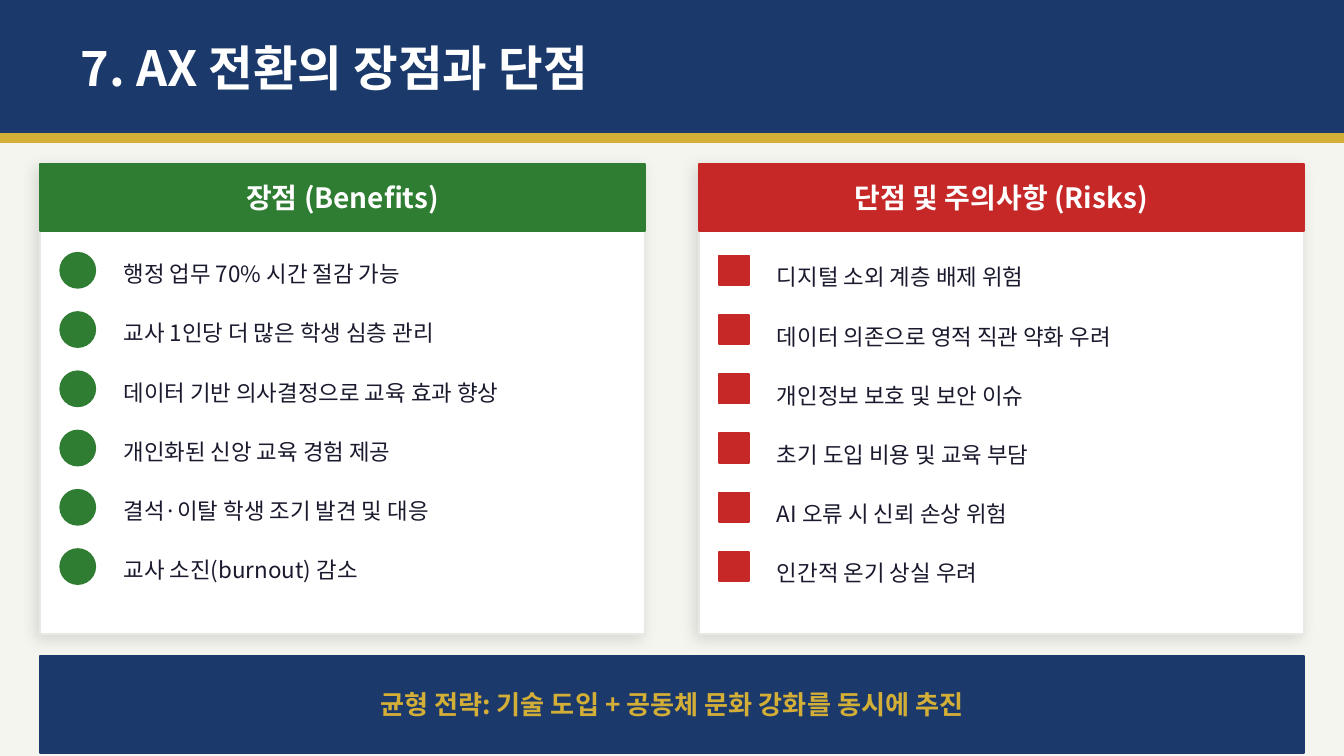
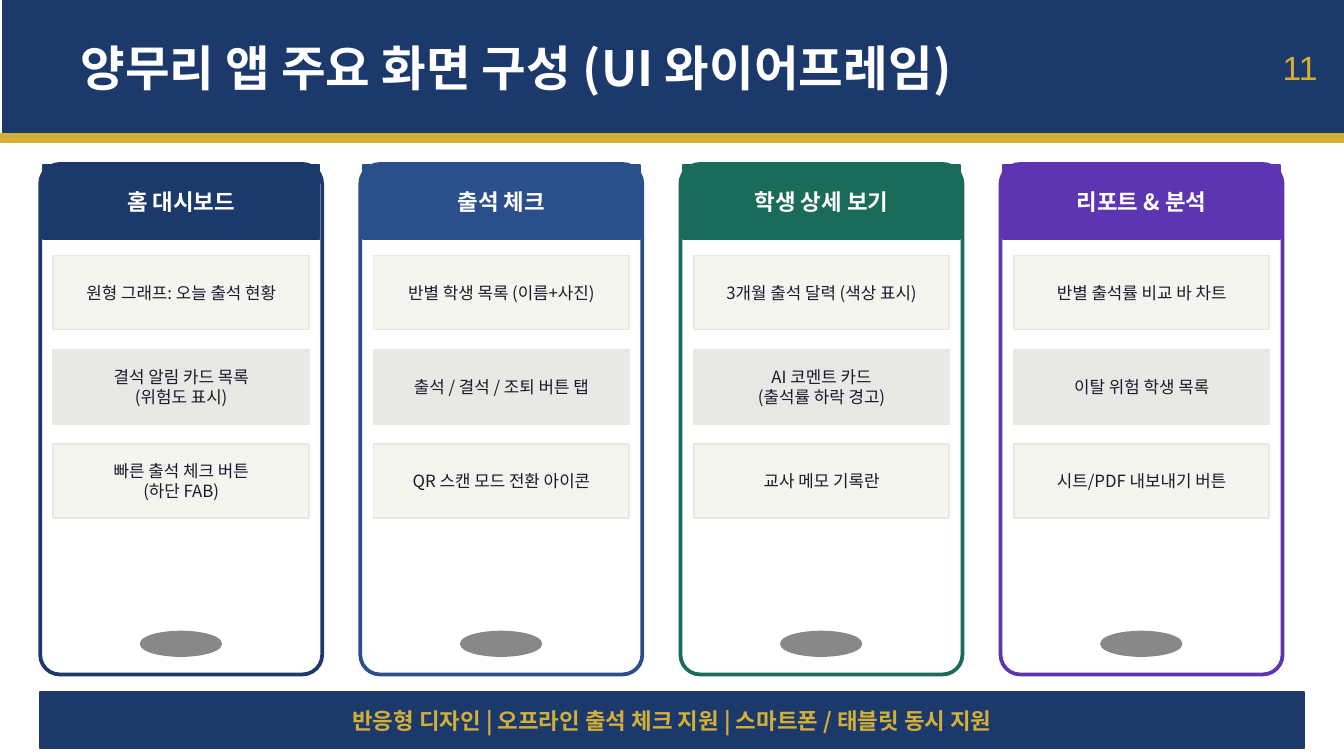
"""Build two slides: benefits and risks of the AX transition, and the app wireframe."""
import pptx
import pptx.dml.color
import pptx.enum.shapes
import pptx.enum.text
import pptx.oxml.ns
import pptx.util
from lxml import etree

Cm = pptx.util.Cm
Pt = pptx.util.Pt
SHAPE = pptx.enum.shapes.MSO_SHAPE
ALIGN = pptx.enum.text.PP_ALIGN
qn = pptx.oxml.ns.qn

KOREAN_FONT = "Noto Sans CJK KR"
NAVY, GOLD, WHITE, INK = "1B3A6B", "D4AF37", "FFFFFF", "1A1A2E"
IVORY, STONE, GRAY = "F5F5F0", "E8E8E4", "888888"
SLIDE_WIDTH, SLIDE_HEIGHT = 25.4, 14.29
MARGIN, CONTENT_TOP = 0.76, 3.1

BALANCE = {
    "title": "7. AX 전환의 장점과 단점",
    "footer": "균형 전략: 기술 도입 + 공동체 문화 강화를 동시에 추진",
    "cards": [
        {
            "heading": "장점 (Benefits)", "color": "2E7D32", "left": MARGIN,
            "marker": SHAPE.OVAL, "marker_size": 0.66,
            "list_offset": 1.32, "list_top": 4.72, "list_width": 9.78,
            "items": [
                "행정 업무 70% 시간 절감 가능",
                "교사 1인당 더 많은 학생 심층 관리",
                "데이터 기반 의사결정으로 교육 효과 향상",
                "개인화된 신앙 교육 경험 제공",
                "결석·이탈 학생 조기 발견 및 대응",
                "교사 소진(burnout) 감소",
            ],
        },
        {
            "heading": "단점 및 주의사항 (Risks)", "color": "C62828", "left": 13.21,
            "marker": SHAPE.RECTANGLE, "marker_size": 0.56,
            "list_offset": 1.22, "list_top": 4.78, "list_width": 9.91,
            "items": [
                "디지털 소외 계층 배제 위험",
                "데이터 의존으로 영적 직관 약화 우려",
                "개인정보 보호 및 보안 이슈",
                "초기 도입 비용 및 교육 부담",
                "AI 오류 시 신뢰 손상 위험",
                "인간적 온기 상실 우려",
            ],
        },
    ],
}

WIREFRAME = {
    "title": "양무리 앱 주요 화면 구성 (UI 와이어프레임)",
    "number": "11",
    "footer": "반응형 디자인 | 오프라인 출석 체크 지원 | 스마트폰 / 태블릿 동시 지원",
    "phones": [
        ("홈 대시보드", NAVY, [
            "원형 그래프: 오늘 출석 현황",
            "결석 알림 카드 목록\n(위험도 표시)",
            "빠른 출석 체크 버튼\n(하단 FAB)",
        ]),
        ("출석 체크", "2A4F8A", [
            "반별 학생 목록 (이름+사진)",
            "출석 / 결석 / 조퇴 버튼 탭",
            "QR 스캔 모드 전환 아이콘",
        ]),
        ("학생 상세 보기", "1A6B5A", [
            "3개월 출석 달력 (색상 표시)",
            "AI 코멘트 카드\n(출석률 하락 경고)",
            "교사 메모 기록란",
        ]),
        ("리포트 & 분석", "5E35B1", [
            "반별 출석률 비교 바 차트",
            "이탈 위험 학생 목록",
            "시트/PDF 내보내기 버튼",
        ]),
    ],
}


def rgb(value):
    """Turn a hex string into a colour."""
    return pptx.dml.color.RGBColor.from_string(value)


def write_text(shape, text, size, color, bold=False, align=ALIGN.CENTER, font=KOREAN_FONT):
    """Fill a shape with vertically centred text, one paragraph per line."""
    frame = shape.text_frame
    frame.text = text
    frame.word_wrap = True
    frame.auto_size = pptx.enum.text.MSO_AUTO_SIZE.NONE
    frame.vertical_anchor = pptx.enum.text.MSO_ANCHOR.MIDDLE
    for paragraph in frame.paragraphs:
        paragraph.alignment = align
        paragraph.font.size = Pt(size)
        paragraph.font.bold = bold
        paragraph.font.color.rgb = rgb(color)
        paragraph.font.name = font
        properties = paragraph._p.pPr.find(qn("a:defRPr"))
        etree.SubElement(properties, qn("a:ea"), typeface=font)


def add_box(slide, left, top, width, height, fill, line=None, kind=SHAPE.RECTANGLE, weight=1):
    """Add a flat filled shape, outlined in its own colour by default."""
    shape = slide.shapes.add_shape(kind, Cm(left), Cm(top), Cm(width), Cm(height))
    shape.shadow.inherit = False
    shape.fill.solid()
    shape.fill.fore_color.rgb = rgb(fill)
    shape.line.color.rgb = rgb(line or fill)
    shape.line.width = Pt(weight)
    return shape


def add_soft_shadow(shape):
    """Give a shape a faint blurred shadow."""
    effects = shape._element.spPr.find(qn("a:effectLst"))
    shadow = etree.SubElement(effects, qn("a:outerShdw"), blurRad=str(Pt(8)),
                              dist=str(Pt(3)), dir="8100000", algn="bl", rotWithShape="0")
    color = etree.SubElement(shadow, qn("a:srgbClr"), val="000000")
    etree.SubElement(color, qn("a:alpha"), val="12000")


def place(slide, placeholder, left, top, width, height):
    """Move a placeholder and bring it to the front."""
    placeholder.left, placeholder.top = Cm(left), Cm(top)
    placeholder.width, placeholder.height = Cm(width), Cm(height)
    slide.shapes._spTree.append(placeholder._element)


def add_framed_slide(presentation, layout_index, content, background, band_left=0):
    """Add a slide with the title band and gold stripe."""
    slide = presentation.slides.add_slide(presentation.slide_layouts[layout_index])
    slide.background.fill.solid()
    slide.background.fill.fore_color.rgb = rgb(background)
    add_box(slide, band_left, 0, SLIDE_WIDTH, 2.54, NAVY)
    add_box(slide, 0, 2.54, SLIDE_WIDTH, 0.15, GOLD)
    place(slide, slide.shapes.title, 1.27, 0.2, 21.59, 2.13)
    write_text(slide.shapes.title, content["title"], 26, WHITE, True, ALIGN.LEFT)
    return slide


def add_footer(slide, text, top, height, size):
    """Add the closing message bar."""
    bar = add_box(slide, MARGIN, top, SLIDE_WIDTH - 2 * MARGIN, height, NAVY)
    write_text(bar, text, size, GOLD, True)


def add_card(slide, card, placeholder):
    """Add a headed card with a marked list."""
    left, width, size = card["left"], 11.43, card["marker_size"]
    add_soft_shadow(add_box(slide, left, CONTENT_TOP, width, 8.89, WHITE, STONE))
    heading = add_box(slide, left, CONTENT_TOP, width, 1.27, card["color"])
    write_text(heading, card["heading"], 15, WHITE, True)
    for row in range(len(card["items"])):
        center = 5.11 + 1.12 * row
        add_box(slide, left + 0.38, center - size / 2, size, size,
                card["color"], kind=card["marker"])
    place(slide, placeholder, left + card["list_offset"], card["list_top"],
          card["list_width"], 6.4)
    placeholder.text_frame.text = "\n".join(card["items"])
    for row, paragraph in enumerate(placeholder.text_frame.paragraphs):
        properties = paragraph._p.get_or_add_pPr()
        properties.set("marL", "0")
        properties.set("indent", "0")
    write_list(placeholder, card["items"])


def write_list(placeholder, items):
    """Write evenly spaced list lines without bullets of their own."""
    write_text(placeholder, "\n".join(items), 12, INK, align=ALIGN.LEFT)
    for row, paragraph in enumerate(placeholder.text_frame.paragraphs):
        paragraph.line_spacing = Pt(17.3)
        paragraph.space_before = Pt(14.4 if row else 0)
        properties = paragraph._p.pPr
        properties.set("marL", "0")
        properties.set("indent", "0")
        properties.find(qn("a:defRPr")).addprevious(etree.Element(qn("a:buNone")))


def add_phone(slide, left, heading, color, panels):
    """Add one phone screen with its header, panels and home button."""
    body = add_box(slide, left, CONTENT_TOP, 5.33, 9.65, WHITE, color,
                   SHAPE.ROUNDED_RECTANGLE, 2)
    body.adjustments[0] = 0.07
    header = add_box(slide, left + 0.05, 3.12, 5.23, 1.4, color)
    write_text(header, heading, 12, WHITE, True)
    for row, text in enumerate(panels):
        panel = add_box(slide, left + 0.25, 4.83 + 1.78 * row, 4.83, 1.4,
                        STONE if row % 2 else IVORY, STONE)
        write_text(panel, text, 9, INK)
    add_box(slide, left + 1.9, 11.94, 1.52, 0.46, GRAY, kind=SHAPE.OVAL)


def build_balance(presentation):
    """Build the slide that weighs benefits against risks."""
    slide = add_framed_slide(presentation, 3, BALANCE, IVORY)
    bodies = [shape for shape in slide.placeholders if shape.placeholder_format.idx]
    for card, placeholder in zip(BALANCE["cards"], bodies):
        add_card(slide, card, placeholder)
    add_footer(slide, BALANCE["footer"], 12.4, 1.83, 14)


def build_wireframe(presentation):
    """Build the slide with the four app screens."""
    slide = add_framed_slide(presentation, 5, WIREFRAME, WHITE, 0.05)
    number = slide.shapes.add_textbox(Cm(23.37), Cm(0.25), Cm(1.78), Cm(2.03))
    write_text(number, WIREFRAME["number"], 18, GOLD, align=ALIGN.RIGHT, font="Arial")
    for column, (heading, color, panels) in enumerate(WIREFRAME["phones"]):
        add_phone(slide, MARGIN + 6.05 * column, heading, color, panels)
    add_footer(slide, WIREFRAME["footer"], 13.08, 1.07, 12)


def main():
    """Build and save the presentation."""
    presentation = pptx.Presentation()
    presentation.slide_width, presentation.slide_height = Cm(SLIDE_WIDTH), Cm(SLIDE_HEIGHT)
    build_balance(presentation)
    build_wireframe(presentation)
    presentation.save("out.pptx")


if __name__ == "__main__":
    main()
